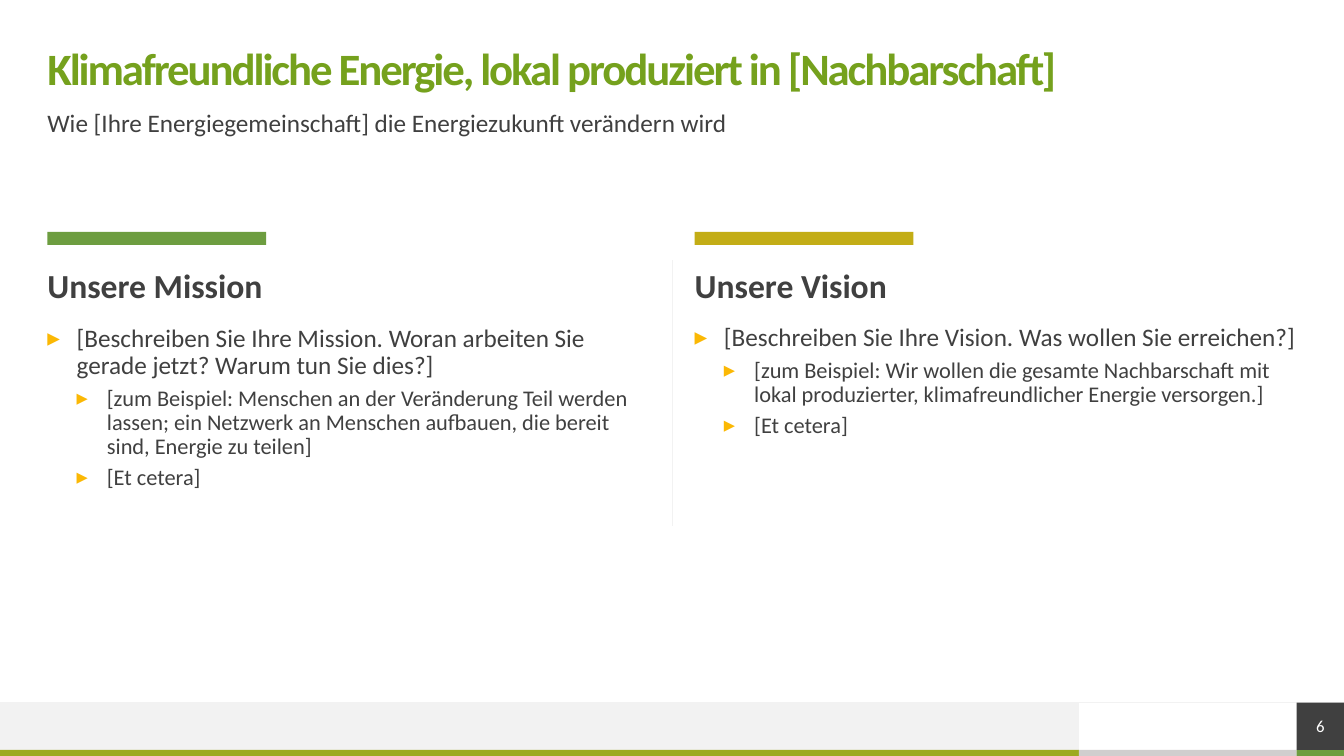
from lxml import etree
from pptx import Presentation
from pptx.dml.color import RGBColor
from pptx.enum.shapes import MSO_CONNECTOR, MSO_SHAPE
from pptx.enum.text import MSO_ANCHOR, MSO_AUTO_SIZE, PP_ALIGN
from pptx.oxml.ns import qn
from pptx.util import Inches, Pt

RECT, LINE = MSO_SHAPE.RECTANGLE, MSO_CONNECTOR.STRAIGHT
TOP, MIDDLE = MSO_ANCHOR.TOP, MSO_ANCHOR.MIDDLE
LEFT, CENTER = PP_ALIGN.LEFT, PP_ALIGN.CENTER
NO_FIT = MSO_AUTO_SIZE.NONE

TITLE_GREEN = RGBColor(0x75, 0xA1, 0x1D)
GREEN = RGBColor(0x6D, 0x9D, 0x40)
OLIVE = RGBColor(0x9C, 0xAA, 0x20)
MUSTARD = RGBColor(0xC3, 0xAD, 0x16)
AMBER = RGBColor(0xFB, 0xB8, 0x04)
DARK = RGBColor(0x40, 0x40, 0x40)
PALE = RGBColor(0xF2, 0xF2, 0xF2)
SILVER = RGBColor(0xD0, 0xCE, 0xCE)
WHITE = RGBColor(0xFF, 0xFF, 0xFF)

WIDTH, HEIGHT = 13.33, 7.5
MARGIN, FULL_W, COLUMN_W = 0.47, 12.4, 5.98
FOOTER_Y, STRIP_Y, STRIP_H = 6.97, 7.44, 0.06
FOOTER_W, NUMBER_X, NUMBER_SIZE = 10.7, 12.86, 0.47

COLUMNS = [
    (MARGIN, GREEN, "Unsere Mission", 3.23, [
        (0, "[Beschreiben Sie Ihre Mission. Woran arbeiten Sie gerade jetzt? Warum tun Sie dies?]"),
        (1, "[zum Beispiel: Menschen an der Veränderung Teil werden lassen; ein Netzwerk an "
            "Menschen aufbauen, die bereit sind, Energie zu teilen]"),
        (1, "[Et cetera]")]),
    (6.89, MUSTARD, "Unsere Vision", 3.22, [
        (0, "[Beschreiben Sie Ihre Vision. Was wollen Sie erreichen?]"),
        (1, "[zum Beispiel: Wir wollen die gesamte Nachbarschaft mit lokal produzierter, "
            "klimafreundlicher Energie versorgen.]"),
        (1, "[Et cetera]")]),
]


class SlideBuilder:
    """Hold the style and the current slide and add each kind of element."""

    font = {"name": "Calibri", "size": Pt(18), "bold": False}
    frame = {"margin_left": 0, "margin_top": 0, "margin_right": 0, "margin_bottom": 0,
             "word_wrap": True, "auto_size": NO_FIT}
    levels = [(0.29, -0.29, 18, 10), (0.59, -0.3, 16, 5)]

    def __init__(self, prs):
        self.s = prs.slides.add_slide(prs.slide_layouts[4])

    def set_all(self, target, values):
        for name, value in values.items():
            setattr(target, name, value)

    def prepare(self, sp, anchor=TOP):
        self.set_all(sp.text_frame, {**self.frame, "vertical_anchor": anchor})
        return sp.text_frame

    def add_text(self, p, text, color=DARK, align=LEFT, before=0, spacing=0.9, **font):
        self.set_all(p, {"alignment": align, "line_spacing": spacing,
                         "space_before": Pt(before), "space_after": Pt(0)})
        r = p.add_run()
        r.text = text
        self.set_all(r.font, {**self.font, **font})
        r.font.color.rgb = color
        return r

    def placeholder(self, idx, x, y, w, h):
        sp = self.s.placeholders[idx]
        self.set_all(sp, {"left": Inches(x), "top": Inches(y),
                          "width": Inches(w), "height": Inches(h)})
        return sp

    def title(self, text, x, y, w, h):
        tf = self.prepare(self.placeholder(0, x, y, w, h), MIDDLE)
        r = self.add_text(tf.paragraphs[0], text, TITLE_GREEN, size=Pt(32), bold=True)
        r.font._element.set("spc", "-150")

    def heading(self, idx, text, x, y, w, h):
        tf = self.prepare(self.placeholder(idx, x, y, w, h))
        self.add_text(tf.paragraphs[0], text, size=Pt(24), bold=True)

    def text(self, text, x, y, w, h):
        sp = self.s.shapes.add_textbox(Inches(x), Inches(y), Inches(w), Inches(h))
        self.add_text(self.prepare(sp).paragraphs[0], text)

    def bullets(self, idx, items, x, y, w, h):
        tf = self.prepare(self.placeholder(idx, x, y, w, h))
        for i, (level, text) in enumerate(items):
            p = tf.add_paragraph() if i else tf.paragraphs[0]
            margin, indent, size, before = self.levels[level]
            p.level = level
            pPr = p._p.get_or_add_pPr()
            pPr.set("marL", str(Inches(margin)))
            pPr.set("indent", str(Inches(indent)))
            color = etree.SubElement(pPr, qn("a:buClr"))
            etree.SubElement(color, qn("a:srgbClr"), val=str(AMBER))
            etree.SubElement(pPr, qn("a:buChar"), char="▸")
            self.add_text(p, text, before=before if i else 0, size=Pt(size))

    def bar(self, x, y, w, h, color):
        sp = self.s.shapes.add_shape(RECT, Inches(x), Inches(y), Inches(w), Inches(h))
        sp.shadow.inherit = False
        sp.fill.solid()
        sp.fill.fore_color.rgb = color
        sp.line.fill.background()
        return sp

    def line(self, x1, y1, x2, y2):
        c = self.s.shapes.add_connector(LINE, Inches(x1), Inches(y1), Inches(x2), Inches(y2))
        c.line.color.rgb = PALE
        c.line.width = Pt(0.5)
        etree.SubElement(c._element.spPr, qn("a:effectLst"))

    def number(self, text, x, y, size):
        tf = self.prepare(self.bar(x, y, size, size, DARK), MIDDLE)
        self.add_text(tf.paragraphs[0], text, WHITE, CENTER, spacing=1.0, size=Pt(12))


def main():
    prs = Presentation()
    prs.slide_width, prs.slide_height = Inches(WIDTH), Inches(HEIGHT)
    b = SlideBuilder(prs)

    b.bar(0, FOOTER_Y, FOOTER_W, STRIP_Y - FOOTER_Y, PALE)
    edges = [0, FOOTER_W, NUMBER_X, WIDTH]
    for x, end, color in zip(edges, edges[1:], [OLIVE, SILVER, GREEN]):
        b.bar(x, STRIP_Y, end - x, STRIP_H, color)
    b.line(WIDTH, FOOTER_Y, 0, FOOTER_Y)

    b.title("Klimafreundliche Energie, lokal produziert in [Nachbarschaft]",
            MARGIN, 0.47, FULL_W, 0.47)
    b.text("Wie [Ihre Energiegemeinschaft] die Energiezukunft verändern wird",
           MARGIN, 1.1, FULL_W, 0.39)

    for i, (x, color, heading, list_y, items) in enumerate(COLUMNS):
        b.bar(x, 2.3, 2.17, 0.13, color)
        b.heading(2 * i + 1, heading, x, 2.67, COLUMN_W, 0.39)
        b.bullets(2 * i + 2, items, x, list_y, COLUMN_W, 2.4)
    b.line(6.67, 2.58, 6.67, 5.22)
    b.number("6", NUMBER_X, FOOTER_Y, NUMBER_SIZE)

    prs.save("out.pptx")


if __name__ == "__main__":
    main()
